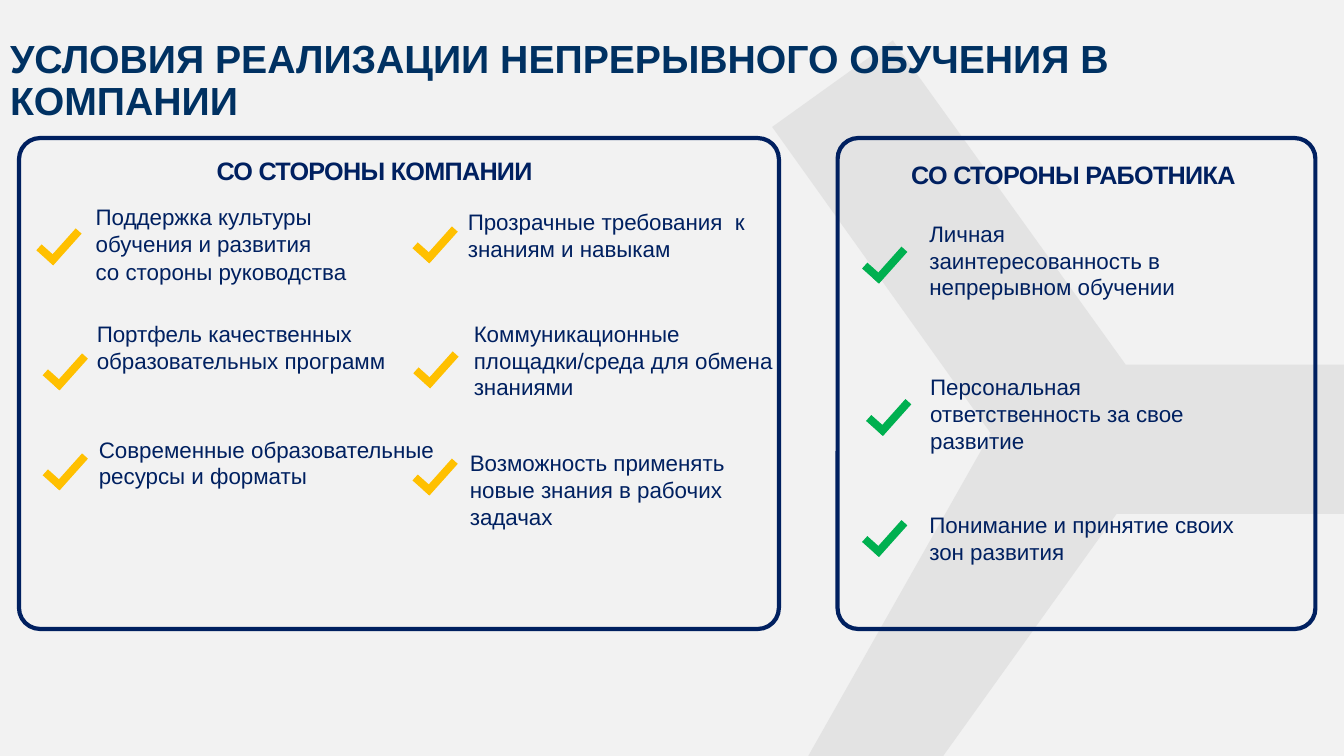
"""Build the slide on the conditions for continuous learning in a company."""
from lxml.etree import SubElement
from pptx import Presentation
from pptx.dml.color import RGBColor
from pptx.enum.shapes import MSO_SHAPE
from pptx.enum.text import MSO_ANCHOR, MSO_AUTO_SIZE, PP_ALIGN
from pptx.oxml.ns import qn
from pptx.util import Cm, Pt

NAVY, YELLOW, GREEN = "002060", "FFC000", "00B050"
WIDTH, HEIGHT = 33.87, 19.05
TITLE = "УСЛОВИЯ РЕАЛИЗАЦИИ НЕПРЕРЫВНОГО ОБУЧЕНИЯ В КОМПАНИИ"
BAND = [(22.5, 1.02), (28.37, 9.19), (WIDTH, 9.19), (WIDTH, 12.95), (28.14, 12.95),
        (23.77, HEIGHT), (20.37, HEIGHT), (24.97, 10.92), (19.46, 3.2)]

# Each item: paragraphs, text (left, top, width, height), check mark (left, top)
PANELS = [
    {
        "heading": "СО СТОРОНЫ КОМПАНИИ", "heading_box": (4.45, 3.89, 9.98, 0.81),
        "frame": (0.48, 3.48, 19.15, 12.37), "check": YELLOW,
        "items": [
            (["Поддержка культуры обучения и развития", "со стороны руководства"],
             (2.41, 5.08, 7.5, 2.13), (0.91, 6.32)),
            (["Портфель качественных образовательных программ"],
             (2.44, 8.03, 7.4, 2.08), (1.07, 9.47)),
            (["Современные образовательные ресурсы и форматы"],
             (2.49, 10.95, 8.61, 2.08), (1.07, 11.99)),
            (["Прозрачные требования  к знаниям и навыкам"],
             (11.79, 5.21, 7.65, 1.4), (10.39, 6.27)),
            (["Коммуникационные площадки/среда для обмена знаниями"],
             (11.94, 8.03, 7.85, 2.08), (10.41, 9.42)),
            (["Возможность применять новые знания в рабочих задачах"],
             (11.84, 11.3, 8, 2.08), (10.39, 12.12)),
        ],
    },
    {
        "heading": "СО СТОРОНЫ РАБОТНИКА", "heading_box": (22.81, 3.99, 8.48, 0.81),
        "frame": (21.11, 3.48, 12.04, 12.37), "check": GREEN,
        "items": [
            (["Личная заинтересованность в непрерывном обучении"],
             (23.42, 5.51, 6.6, 2.08), (21.72, 6.78)),
            (["Персональная ответственность за свое развитие"],
             (23.44, 9.37, 7.54, 2.08), (21.82, 10.62)),
            (["Понимание и принятие своих зон развития"],
             (23.42, 12.85, 8.03, 1.4), (21.72, 13.67)),
        ],
    },
]


def rgb(value):
    return RGBColor.from_string(value)


def box(values):
    return [Cm(v) for v in values]


def add_run(p, text, size, color=NAVY, bold=False):
    r = p.add_run()
    r.text = text
    r.font.name, r.font.size, r.font.bold = "Arial", Pt(size), bold
    r.font.color.rgb = rgb(color)
    return r


def paint(sp, color):
    sp.shadow.inherit = False
    sp.fill.solid()
    sp.fill.fore_color.rgb = rgb(color)
    sp.line.fill.background()


def add_text(shapes, paragraphs, place, size=16, heading=False):
    tf = shapes.add_textbox(*box(place)).text_frame
    tf.word_wrap = True
    tf.auto_size = MSO_AUTO_SIZE.SHAPE_TO_FIT_TEXT
    tf.margin_left = tf.margin_right = tf.margin_bottom = 0
    tf.margin_top = Cm(0.03)
    for i, text in enumerate(paragraphs):
        p = tf.add_paragraph() if i else tf.paragraphs[0]
        if i:
            p.space_before = Pt(1)
        r = add_run(p, text, size, bold=heading)
        if heading:
            p.alignment = PP_ALIGN.CENTER
            r.font._element.set("spc", "-50")


def add_check(shapes, left, top, color):
    group = shapes.add_group_shape()
    strokes = [((left, top, 0.56, 0.2), 41.8), ((left + 0.18, top - 0.2, 1.07, 0.2), 131.8)]
    for place, angle in strokes:
        sp = group.shapes.add_shape(MSO_SHAPE.RECTANGLE, *box(place))
        sp.rotation = angle
        paint(sp, color)


def add_band(shapes):
    points = [box(point) for point in BAND]
    builder = shapes.build_freeform(*points[0], scale=1.0)
    builder.add_line_segments(points[1:], close=True)
    sp = builder.convert_to_shape()
    paint(sp, "D9D9D9")
    clr = sp._element.spPr.find(qn("a:solidFill")).find(qn("a:srgbClr"))
    SubElement(clr, qn("a:alpha")).set("val", "60000")
    shapes._spTree.insert(2, sp._element)


def add_title(sp):
    sp.left, sp.top, sp.width, sp.height = box((0, 0.86, WIDTH, 1.63))
    tf = sp.text_frame
    tf.word_wrap = True
    tf.auto_size = MSO_AUTO_SIZE.NONE
    tf.vertical_anchor = MSO_ANCHOR.TOP
    p = tf.paragraphs[0]
    p.alignment, p.line_spacing = PP_ALIGN.LEFT, 0.9
    add_run(p, TITLE, 28, "003162", bold=True)


def add_frame(shapes, place):
    sp = shapes.add_shape(MSO_SHAPE.ROUNDED_RECTANGLE, *box(place))
    sp.adjustments[0] = 0.043
    sp.shadow.inherit = False
    sp.fill.background()
    sp.line.color.rgb = rgb(NAVY)
    sp.line.width = Pt(3)


def main():
    prs = Presentation()
    prs.slide_width, prs.slide_height = Cm(WIDTH), Cm(HEIGHT)
    slide = prs.slides.add_slide(prs.slide_layouts[5])
    slide.background.fill.solid()
    slide.background.fill.fore_color.rgb = rgb("F2F2F2")
    shapes = slide.shapes
    add_band(shapes)
    add_title(shapes.title)
    for panel in PANELS:
        add_text(shapes, [panel["heading"]], panel["heading_box"], 18, heading=True)
        for paragraphs, place, mark in panel["items"]:
            add_text(shapes, paragraphs, place)
            add_check(shapes, *mark, panel["check"])
        add_frame(shapes, panel["frame"])
    prs.save("out.pptx")


if __name__ == "__main__":
    main()
